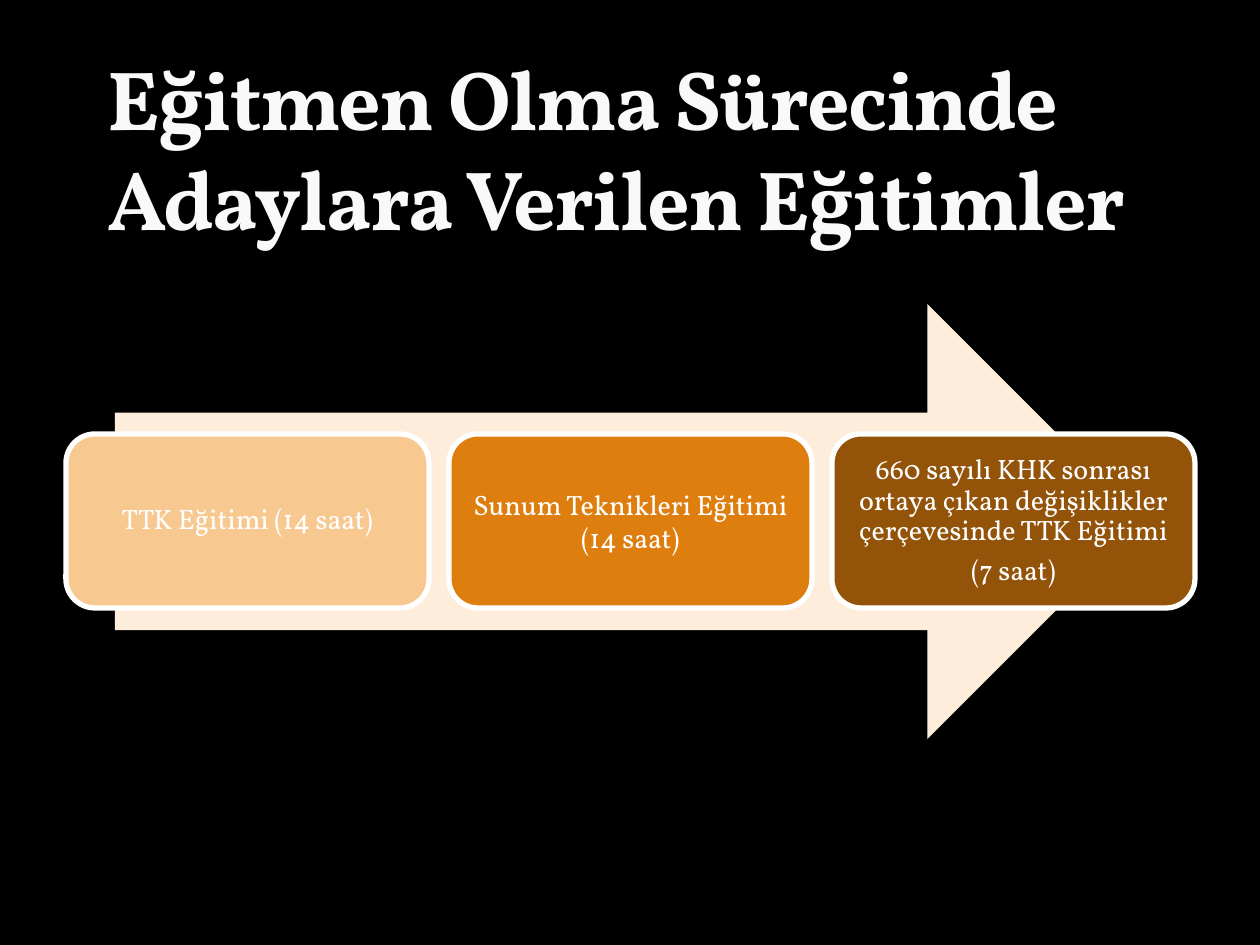
from pptx import Presentation
from pptx import util as u
from pptx.dml.color import RGBColor
from pptx.enum import shapes, text

SCALE = 914400 / 126


def px(n):
    return u.Emu(round(n * SCALE))


def tint(code):
    return RGBColor.from_string(code)


class Deck:
    font = "Vollkorn"
    white = "FFFFFF"

    def __init__(self, wide, high, back):
        self.prs = Presentation()
        self.prs.slide_width, self.prs.slide_height = px(wide), px(high)
        self.slide = self.prs.slides.add_slide(self.prs.slide_layouts[6])
        fill = self.slide.background.fill
        fill.solid()
        fill.fore_color.rgb = tint(back)

    def shape(self, kind, box, fill, line=None):
        item = self.slide.shapes.add_shape(kind, *map(px, box))
        item.shadow.inherit = False
        item.fill.solid()
        item.fill.fore_color.rgb = tint(fill)
        if line:
            item.line.color.rgb = tint(line)
            item.line.width = u.Pt(3)
        else:
            item.line.fill.background()
        return item

    def style(self, para, size, color, bold=False):
        font = para.font
        font.name, font.size, font.bold = self.font, u.Pt(size), bold
        font.color.rgb = tint(color)

    def title(self, box, words):
        frame = self.slide.shapes.add_textbox(*map(px, box)).text_frame
        frame.word_wrap = True
        frame.vertical_anchor = text.MSO_ANCHOR.BOTTOM
        para = frame.paragraphs[0]
        run = para.add_run()
        run.text = words
        self.style(para, 48, "F9F9F9", True)
        run.font._element.set("spc", "-100")

    def arrow(self, box, fill):
        self.shape(shapes.MSO_SHAPE.RIGHT_ARROW, box, fill)

    def step(self, box, fill, lines, tight):
        kind = shapes.MSO_SHAPE.ROUNDED_RECTANGLE
        frame = self.shape(kind, box, fill, self.white).text_frame
        frame.word_wrap = True
        frame.vertical_anchor = text.MSO_ANCHOR.MIDDLE
        frame.margin_left = frame.margin_right = px(9)
        frame.margin_top = frame.margin_bottom = px(9)
        frame.text = "\n".join(lines)
        for para in frame.paragraphs:
            para.alignment = text.PP_ALIGN.CENTER
            if tight:
                para.line_spacing = 0.9
                para.space_after = u.Pt(5.6)
            self.style(para, 16, self.white)


def main():
    deck = Deck(1260, 945, "000000")
    deck.arrow((115, 304, 1030, 435), "FDEDDA")
    steps = [
        ("F8C891", ["TTK Eğitimi (14 saat)"], True),
        ("DD7E0E", ["Sunum Teknikleri Eğitimi (14 saat)"], False),
        ("93540A", ["660 sayılı KHK sonrası ortaya çıkan değişiklikler "
                    "çerçevesinde TTK Eğitimi", "(7 saat)"], True),
    ]
    left, wide, gap = 66, 363, 20
    for i, (fill, lines, tight) in enumerate(steps):
        box = (left + i * (wide + gap), 434, wide, 174)
        deck.step(box, fill, lines, tight)
    deck.title((95, 21, 1102, 233),
               "Eğitmen Olma Sürecinde Adaylara Verilen Eğitimler")
    deck.prs.save("out.pptx")


if __name__ == "__main__":
    main()
